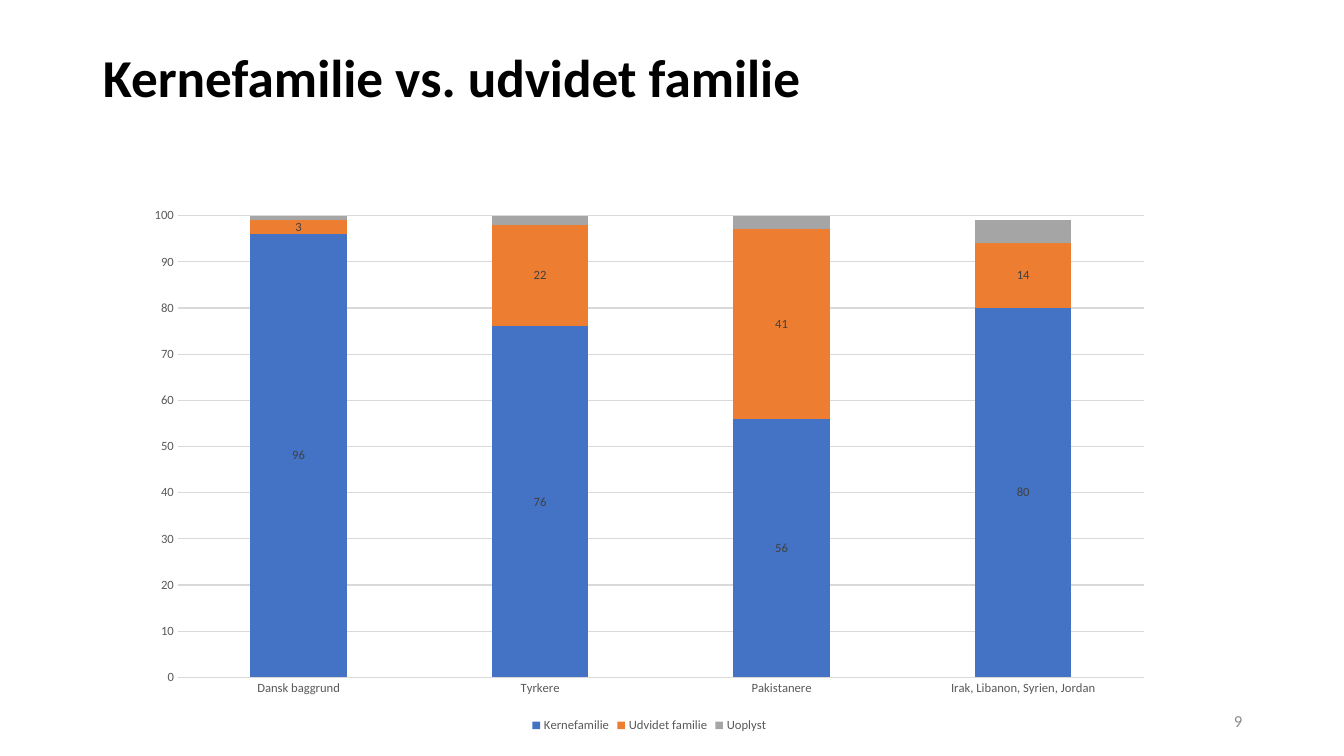
from dataclasses import dataclass

from pptx import Presentation
from pptx.chart.data import CategoryChartData as ChartData
from pptx.dml.color import RGBColor
from pptx.enum.chart import XL_CHART_TYPE as Kind
from pptx.enum.chart import XL_LABEL_POSITION as Spot
from pptx.enum.chart import XL_LEGEND_POSITION as Side
from pptx.enum.chart import XL_TICK_MARK as Tick
from pptx.enum.text import MSO_ANCHOR as Anchor
from pptx.enum.text import MSO_AUTO_SIZE as Fit
from pptx.enum.text import PP_ALIGN as Align
from pptx.text.text import Font, TextFrame
from pptx.util import Inches, Pt

COLORS = {
    "title": "000000",
    "axis": "595959",
    "label": "404040",
    "grid": "D9D9D9",
    "page": "8C8C8C",
    "blue": "4472C4",
    "orange": "ED7D31",
    "gray": "A5A5A5",
}


@dataclass
class Series:
    name: str
    vals: tuple[int, ...]
    color: str
    labels: bool = True


GROUPS = ["Dansk baggrund", "Tyrkere", "Pakistanere", "Irak, Libanon, Syrien, Jordan"]
SERIES = [
    Series("Kernefamilie", (96, 76, 56, 80), "blue"),
    Series("Udvidet familie", (3, 22, 41, 14), "orange"),
    Series("Uoplyst", (1, 2, 3, 5), "gray", False),
]


def rgb(name: str) -> RGBColor:
    return RGBColor.from_string(COLORS[name])


def style(font: Font, size: float, color: str, bold: bool = False) -> None:
    font.name = "Calibri"
    font.size = Pt(size)
    font.bold = bold
    font.color.rgb = rgb(color)


def write(frame: TextFrame, text: str, align: Align, size: float, color: str,
          bold: bool = False) -> None:
    frame.text = text
    frame.word_wrap = True
    frame.auto_size = Fit.NONE
    frame.vertical_anchor = Anchor.MIDDLE
    para = frame.paragraphs[0]
    para.alignment = align
    style(para.font, size, color, bold)


def add_title(slide) -> None:
    title = slide.shapes.title
    title.left, title.top = Inches(0.92), Inches(0.4)
    title.width, title.height = Inches(11.5), Inches(0.79)
    write(title.text_frame, "Kernefamilie vs. udvidet familie", Align.LEFT, 38, "title", True)
    title.text_frame.paragraphs[0].line_spacing = 0.9


def add_chart(slide) -> None:
    data = ChartData(number_format="General")
    data.categories = GROUPS
    for item in SERIES:
        data.add_series(item.name, item.vals)
    chart = slide.shapes.add_chart(
        Kind.COLUMN_STACKED, Inches(1.33), Inches(1.96), Inches(10.22), Inches(5.35), data
    ).chart
    style(chart.font, 10, "title")
    chart.has_title = False
    chart.has_legend = True
    chart.legend.position = Side.BOTTOM
    chart.legend.include_in_layout = False
    style(chart.legend.font, 9, "axis")

    for axis in (chart.category_axis, chart.value_axis):
        axis.major_tick_mark = axis.minor_tick_mark = Tick.NONE
        style(axis.tick_labels.font, 9, "axis")
    scale = chart.value_axis
    scale.minimum_scale, scale.maximum_scale, scale.major_unit = 0, 100, 10
    scale.format.line.fill.background()
    for line in (chart.category_axis.format.line, scale.major_gridlines.format.line):
        line.color.rgb = rgb("grid")
        line.width = Pt(0.75)

    plot = chart.plots[0]
    plot.gap_width, plot.overlap = 150, 100
    plot.vary_by_categories = False
    for item, bars in zip(SERIES, plot.series):
        bars.format.fill.solid()
        bars.format.fill.fore_color.rgb = rgb(item.color)
        if item.labels:
            labels = bars.data_labels
            labels.show_value = True
            labels.position = Spot.CENTER
            style(labels.font, 9, "label")


def add_page(slide) -> None:
    box = slide.shapes.add_textbox(Inches(9.42), Inches(6.95), Inches(3), Inches(0.4))
    write(box.text_frame, "9", Align.RIGHT, 12, "page")


def main() -> None:
    deck = Presentation()
    deck.slide_width, deck.slide_height = Inches(13.33), Inches(7.5)
    slide = deck.slides.add_slide(deck.slide_layouts[5])
    add_title(slide)
    add_chart(slide)
    add_page(slide)
    deck.save("out.pptx")


if __name__ == "__main__":
    main()
